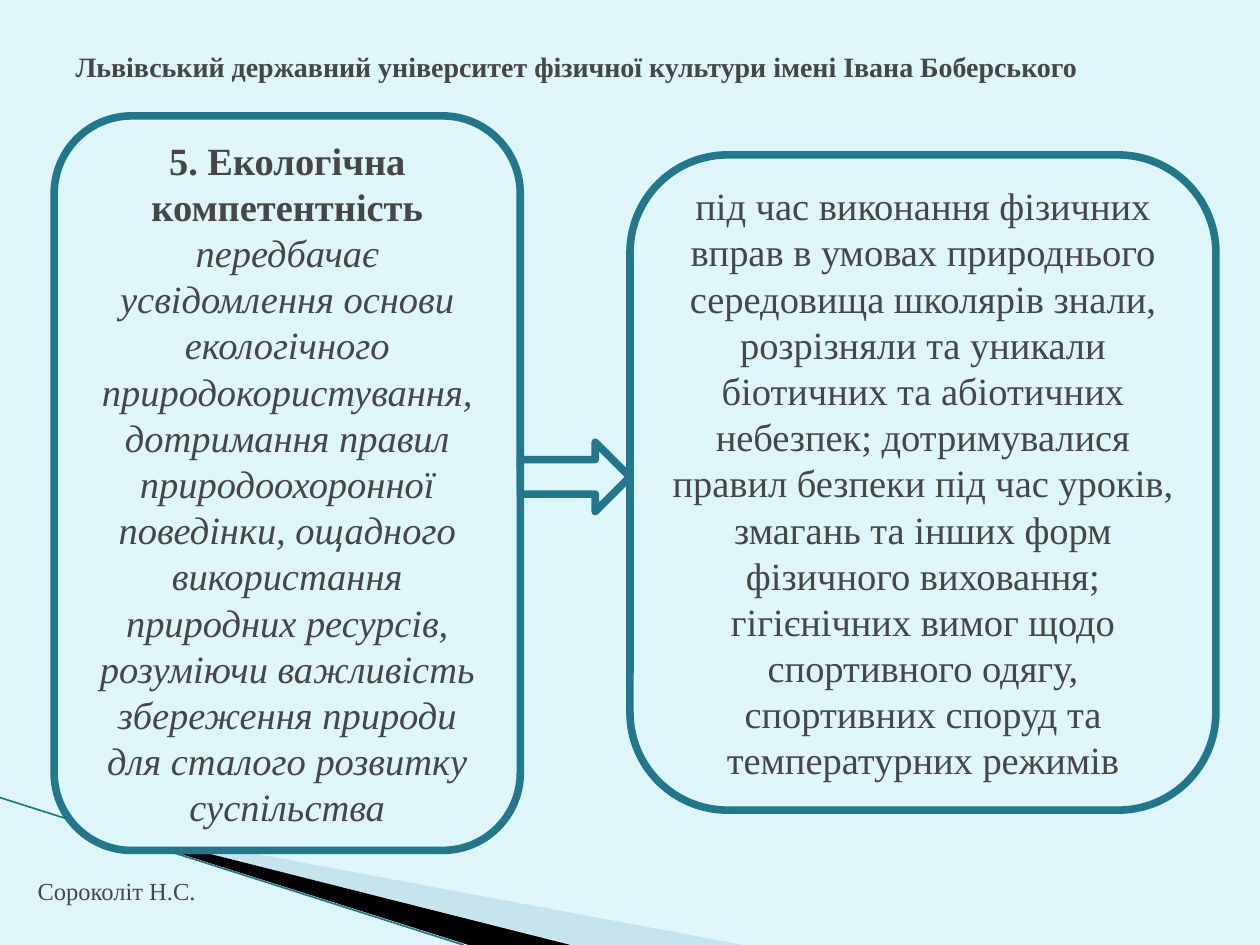
from dataclasses import dataclass

from lxml import etree
from pptx import Presentation
from pptx.dml.color import RGBColor
from pptx.enum.shapes import MSO_CONNECTOR, MSO_SHAPE
from pptx.enum.text import MSO_ANCHOR, MSO_AUTO_SIZE, PP_ALIGN
from pptx.oxml.ns import qn
from pptx.util import Inches, Pt

STRAIGHT = MSO_CONNECTOR.STRAIGHT
ROUNDED = MSO_SHAPE.ROUNDED_RECTANGLE
RIGHT_ARROW = MSO_SHAPE.RIGHT_ARROW
MIDDLE, TOP = MSO_ANCHOR.MIDDLE, MSO_ANCHOR.TOP
LEFT, CENTER = PP_ALIGN.LEFT, PP_ALIGN.CENTER
NO_FIT, GROW = MSO_AUTO_SIZE.NONE, MSO_AUTO_SIZE.SHAPE_TO_FIT_TEXT
TITLE_ONLY = 5
COLUMNS, ROWS = 100, 75


@dataclass(frozen=True)
class Theme:
    font: str = "Times New Roman"
    background: RGBColor = RGBColor.from_string("DEF5FA")
    text: RGBColor = RGBColor.from_string("464646")
    accent: RGBColor = RGBColor.from_string("21788D")
    pale: RGBColor = RGBColor.from_string("A0CBDC")
    black: RGBColor = RGBColor.from_string("000000")
    title_size: float = 16
    author_size: float = 14
    body_size: float = 22
    outline: float = 4.33
    hairline: float = 0.95


class SlideBuilder:
    def __init__(self, presentation, theme):
        self.theme = theme
        self.column = presentation.slide_width / COLUMNS
        self.row = presentation.slide_height / ROWS
        self.slide = presentation.slides.add_slide(presentation.slide_layouts[TITLE_ONLY])
        self.shapes = self.slide.shapes
        fill = self.slide.background.fill
        fill.solid()
        fill.fore_color.rgb = theme.background

    def point(self, column, row):
        return round(column * self.column), round(row * self.row)

    def box(self, left, top, width, height):
        return *self.point(left, top), *self.point(width, height)

    def set_text(self, shape, runs, size, align=LEFT, **frame_format):
        frame = shape.text_frame
        for name, value in frame_format.items():
            setattr(frame, name, value)
        paragraph = frame.paragraphs[0]
        paragraph.alignment = align
        for text, style in runs:
            run = paragraph.add_run()
            run.text = text
            run.font.color.rgb = self.theme.text
            font_format = {"name": self.theme.font, "size": Pt(size), "bold": False, **style}
            for name, value in font_format.items():
                setattr(run.font, name, value)

    def title(self, area, text):
        shape = self.shapes.title
        shape.left, shape.top, shape.width, shape.height = self.box(*area)
        self.set_text(shape, [(text, {"bold": True})], self.theme.title_size,
                      vertical_anchor=MIDDLE, word_wrap=True, auto_size=NO_FIT)

    def label(self, area, text):
        shape = self.shapes.add_textbox(*self.box(*area))
        self.set_text(shape, [(text, {})], self.theme.author_size,
                      vertical_anchor=TOP, word_wrap=False, auto_size=GROW)

    def outlined(self, kind, area, runs=()):
        shape = self.shapes.add_shape(kind, *self.box(*area))
        shape.shadow.inherit = False
        shape.fill.solid()
        shape.fill.fore_color.rgb = self.theme.background
        shape.line.color.rgb = self.theme.accent
        shape.line.width = Pt(self.theme.outline)
        self.set_text(shape, runs, self.theme.body_size, CENTER,
                      vertical_anchor=MIDDLE, word_wrap=True)

    def wedge(self, corners, color, opacity=100):
        start, *others = [self.point(*corner) for corner in corners]
        builder = self.shapes.build_freeform(*start)
        builder.add_line_segments(others, close=True)
        shape = builder.convert_to_shape()
        shape.shadow.inherit = False
        shape.line.fill.background()
        shape.fill.solid()
        shape.fill.fore_color.rgb = color
        if opacity < 100:
            color_element = next(shape._element.spPr.iter(qn("a:srgbClr")))
            etree.SubElement(color_element, qn("a:alpha"), val=str(opacity * 1000))

    def line(self, start, end):
        connector = self.shapes.add_connector(STRAIGHT, *self.point(*start), *self.point(*end))
        connector.line.color.rgb = self.theme.accent
        connector.line.width = Pt(self.theme.hairline)
        etree.SubElement(connector._element.spPr, qn("a:effectLst"))


def main():
    presentation = Presentation()
    presentation.slide_width, presentation.slide_height = Inches(10), Inches(7.5)
    theme = Theme()
    builder = SlideBuilder(presentation, theme)

    builder.wedge([(5.5, 65), (59, 75), (45.6, 75)], theme.pale, 40)
    builder.wedge([(5.3, 64.9), (45.3, 75), (37.2, 75)], theme.black)
    builder.line((0, 63.3), (36.8, 75))

    builder.title((5, 3, 90, 4.6),
                  "Львівський державний університет фізичної культури імені Івана Боберського")
    builder.label((2, 69, 15.7, 3.4), "Сороколіт Н.С.")
    builder.outlined(ROUNDED, (4.3, 9.2, 37, 58.3), [
        ("5. Екологічна компетентність ", {"bold": True}),
        ("передбачає усвідомлення основи екологічного природокористування, "
         "дотримання правил природоохоронної поведінки, ощадного використання "
         "природних ресурсів, розуміючи важливість збереження природи для "
         "сталого розвитку суспільства", {"italic": True}),
    ])
    builder.outlined(ROUNDED, (50, 12.3, 46.5, 52), [
        ("під час виконання фізичних вправ в умовах природнього середовища "
         "школярів знали, розрізняли та уникали біотичних та абіотичних небезпек; "
         "дотримувалися правил безпеки під час уроків, змагань та інших форм "
         "фізичного виховання; гігієнічних вимог щодо спортивного одягу, "
         "спортивних споруд та температурних режимів", {}),
    ])
    builder.outlined(RIGHT_ARROW, (41.3, 35.1, 8.7, 5.5))
    presentation.save("out.pptx")


if __name__ == "__main__":
    main()
